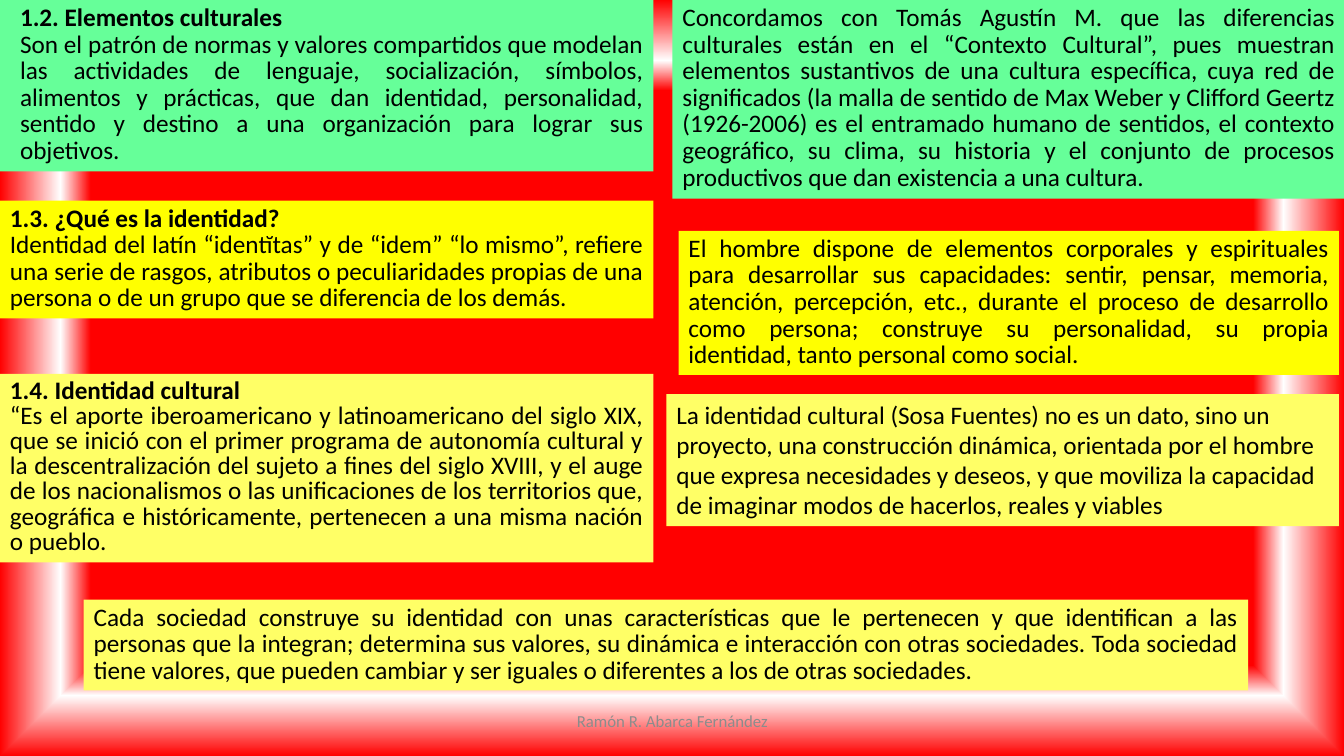
from lxml import etree
from pptx import Presentation
from pptx.dml.color import RGBColor
from pptx.enum.text import MSO_ANCHOR, MSO_AUTO_SIZE, PP_ALIGN
from pptx.oxml.ns import qn
from pptx.util import Inches, Pt

JUST, LEFT, MID = PP_ALIGN.JUSTIFY, PP_ALIGN.LEFT, PP_ALIGN.CENTER
GROW, FIXED = MSO_AUTO_SIZE.SHAPE_TO_FIT_TEXT, MSO_AUTO_SIZE.NONE
TOP, CENTER = MSO_ANCHOR.TOP, MSO_ANCHOR.MIDDLE
HEX = {"red": "FF0000", "white": "FFFFFF", "pale": "CEE1F2", "green": "66FF99",
       "yellow": "FFFF00", "lemon": "FFFF66", "black": "000000", "gray": "8C8C8C"}
STOPS = [(76, "red"), (84, "white"), (100, "red"), (100, "pale")]


def add_text(slide, spot, lines, color, size, look, frame_look, indent=0):
    box = slide.shapes.add_textbox(*map(Inches, spot))
    frame = box.text_frame
    for name, value in frame_look.items():
        setattr(frame, name, value)
    for i, (text, bold) in enumerate(lines):
        para = frame.paragraphs[0] if i == 0 else frame.add_paragraph()
        for name, value in look.items():
            setattr(para, name, value)
        if indent:
            para._p.get_or_add_pPr().set("marL", str(Inches(indent)))
        run = para.add_run()
        run.text = text
        for name, value in {"name": "Calibri", "size": Pt(size), "bold": bold}.items():
            setattr(run.font, name, value)
        run.font.color.rgb = RGBColor.from_string(HEX[color])
    return box


deck = Presentation()
deck.slide_width, deck.slide_height = Inches(13.33), Inches(7.5)
slide = deck.slides.add_slide(deck.slide_layouts[6])

slide.background.fill.gradient()
grad = slide.element.find(".//" + qn("a:gradFill"))
for child in list(grad):
    grad.remove(child)
stops = etree.SubElement(grad, qn("a:gsLst"))
for pos, color in STOPS:
    stop = etree.SubElement(stops, qn("a:gs"), pos=str(pos * 1000))
    etree.SubElement(stop, qn("a:srgbClr"), val=HEX[color])
shade = etree.SubElement(grad, qn("a:path"), {"path": "rect"})
etree.SubElement(shade, qn("a:fillToRect"), {side: "50000" for side in "ltrb"})

PANELS = [
    ((0, 0, 6.48, 1.7), "green", JUST, 19, 0.1, "1.2. Elementos culturales",
     "Son el patrón de normas y valores compartidos que modelan las actividades de "
     "lenguaje, socialización, símbolos, alimentos y prácticas, que dan identidad, "
     "personalidad, sentido y destino a una organización para lograr sus objetivos."),
    ((6.67, 0, 6.67, 1.97), "green", JUST, 19, 0, "",
     "Concordamos con Tomás Agustín M. que las diferencias culturales están en el "
     "“Contexto Cultural”, pues muestran elementos sustantivos de una cultura "
     "específica, cuya red de significados (la malla de sentido de Max Weber y "
     "Clifford Geertz (1926-2006) es el entramado humano de sentidos, el contexto "
     "geográfico, su clima, su historia y el conjunto de procesos productivos que "
     "dan existencia a una cultura."),
    ((0, 1.99, 6.48, 1.17), "yellow", JUST, 19, 0, "1.3. ¿Qué es la identidad?",
     "Identidad del latín “identĭtas” y de “idem” “lo mismo”, refiere una serie de "
     "rasgos, atributos o peculiaridades propias de una persona o de un grupo que "
     "se diferencia de los demás."),
    ((0, 3.71, 6.48, 1.87), "lemon", JUST, 18, 0, "1.4. Identidad cultural",
     "“Es el aporte iberoamericano y latinoamericano del siglo XIX, que se inició "
     "con el primer programa de autonomía cultural y la descentralización del "
     "sujeto a fines del siglo XVIII, y el auge de los nacionalismos o las "
     "unificaciones de los territorios que, geográfica e históricamente, pertenecen "
     "a una misma nación o pueblo."),
    ((0.83, 5.95, 11.55, 0.9), "lemon", JUST, 19, 0, "",
     "Cada sociedad construye su identidad con unas características que le "
     "pertenecen y que identifican a las personas que la integran; determina sus "
     "valores, su dinámica e interacción con otras sociedades. Toda sociedad tiene "
     "valores, que pueden cambiar y ser iguales o diferentes a los de otras "
     "sociedades."),
    ((6.73, 2.29, 6.55, 1.43), "yellow", JUST, 19, 0, "",
     "El hombre dispone de elementos corporales y espirituales para desarrollar sus "
     "capacidades: sentir, pensar, memoria, atención, percepción, etc., durante el "
     "proceso de desarrollo como persona; construye su personalidad, su propia "
     "identidad, tanto personal como social."),
    ((6.61, 3.91, 6.67, 1.31), "lemon", LEFT, None, 0, "",
     "La identidad cultural (Sosa Fuentes) no es un dato, sino un proyecto, una "
     "construcción dinámica, orientada por el hombre que expresa necesidades y "
     "deseos, y que moviliza la capacidad de imaginar modos de hacerlos, reales y "
     "viables"),
]
for spot, fill, align, pitch, indent, head, body in PANELS:
    lines = [(head, True)] if head else []
    look = {"alignment": align, "line_spacing": Pt(pitch) if pitch else None}
    frame_look = {"word_wrap": True, "auto_size": GROW, "vertical_anchor": TOP}
    panel = add_text(slide, spot, lines + [(body, False)], "black", 18,
                     look, frame_look, indent)
    panel.fill.solid()
    panel.fill.fore_color.rgb = RGBColor.from_string(HEX[fill])

add_text(slide, (4.42, 6.95, 4.5, 0.4), [("Ramón R. Abarca Fernández", False)],
         "gray", 12, {"alignment": MID},
         {"word_wrap": True, "auto_size": FIXED, "vertical_anchor": CENTER})

deck.save("out.pptx")
